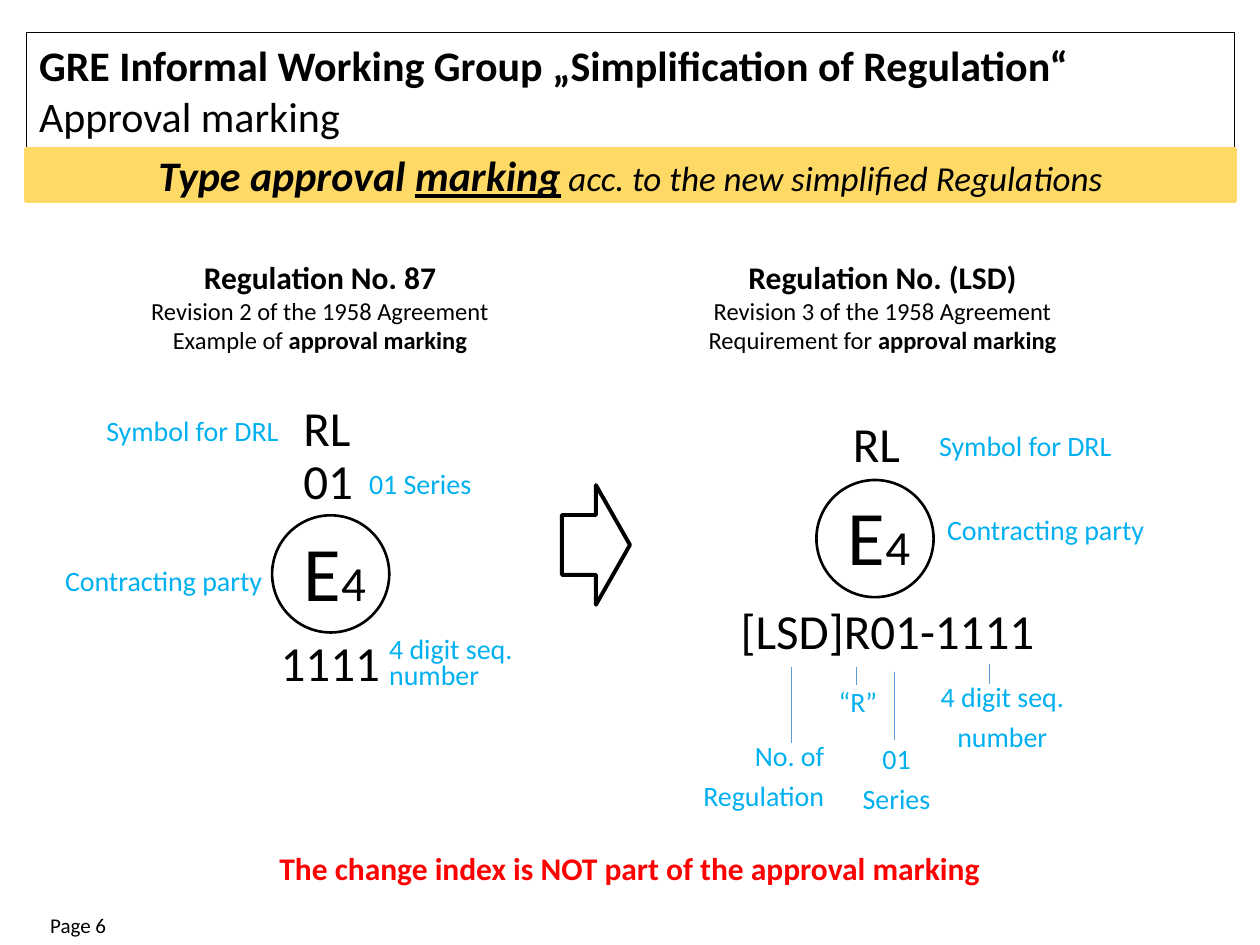
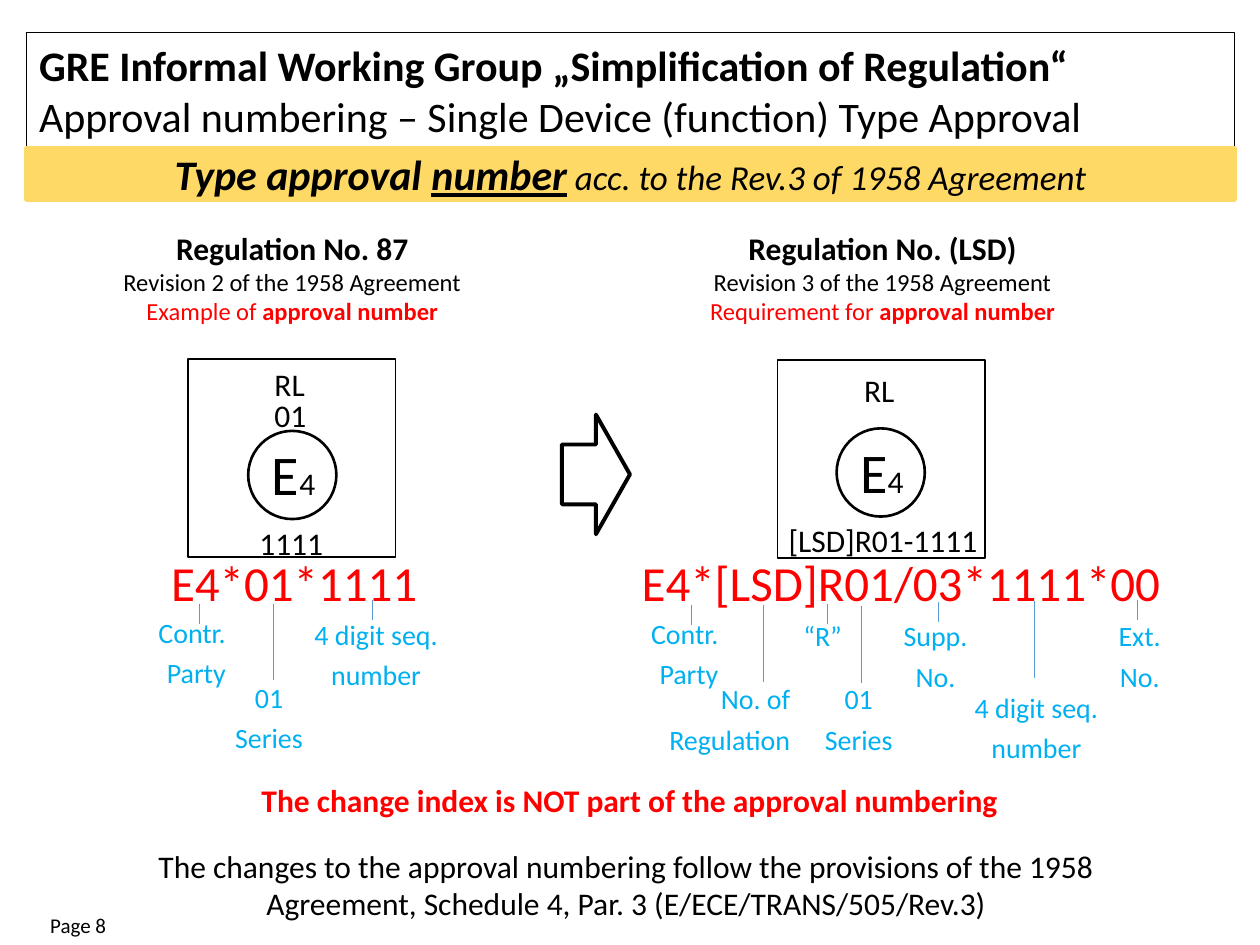
"""Build two slides that compare approval marking and approval numbering."""
from lxml import etree
from pptx import Presentation
from pptx import util as u
from pptx.dml import color
from pptx.enum import shapes, text
from pptx.oxml import ns

HUES = {"ink": "000000", "note": "00B0F0", "tick": "5B9BD5", "band": "FFD966",
        "alert": "FF0000", "white": "FFFFFF"}
FACE = "Calibri"
HEAD = "GRE Informal Working Group „Simplification of Regulation“"
BOLD = {"bold": True}
LEFT, MID, RIGHT = text.PP_ALIGN.LEFT, text.PP_ALIGN.CENTER, text.PP_ALIGN.RIGHT
KINDS = shapes.MSO_SHAPE
SEQ = "4 digit seq. number"


def rgb(hue):
    """Return the colour of a named hue."""
    return color.RGBColor.from_string(HUES[hue])


def box(*at):
    """Turn left, top, width and height into lengths."""
    return [u.Inches(x) for x in at]


def style(font, fmt):
    """Set font attributes from a dict of format values."""
    for key, val in fmt.items():
        if key == "hue":
            font.color.rgb = rgb(val)
        else:
            setattr(font, key, u.Pt(val) if key == "size" else val)


def write(shape, paras, size, hue="ink", align=LEFT, lead=None, **frame):
    """Fill a shape with paragraphs, each a list of (text, format) runs."""
    body = shape.text_frame
    prefs = {"word_wrap": True, "auto_size": text.MSO_AUTO_SIZE.SHAPE_TO_FIT_TEXT}
    for key, val in {**prefs, **frame}.items():
        setattr(body, key, val)
    for i, runs in enumerate(paras):
        para = body.add_paragraph() if i else body.paragraphs[0]
        para.alignment = align
        if lead:
            para.line_spacing = u.Pt(lead)
        for words, fmt in runs:
            run = para.add_run()
            run.text = words
            style(run.font, {"name": FACE, "size": size, "hue": hue, **fmt})


def plain(words):
    """Split text at line ends into paragraphs of one run each."""
    return [[(line, {})] for line in words.split("\n")]


def put(slide, at, paras, size, **opts):
    """Add a text box."""
    write(slide.shapes.add_textbox(*box(*at)), paras, size, **opts)


def mark(slide, words, at, size=28, **opts):
    """Add one unwrapped part of an approval mark."""
    put(slide, at, plain(words), size, lead=30, word_wrap=False, **opts)


def note(slide, words, at, align=MID, lead=23):
    """Add a blue explanation."""
    put(slide, at, plain(words), 16, hue="note", align=align, lead=lead)


def shape(slide, kind, at, width=None, line="ink", fill=None):
    """Add a flat preset shape."""
    form = slide.shapes.add_shape(kind, *box(*at))
    form.shadow.inherit = False
    if fill:
        form.fill.solid()
        form.fill.fore_color.rgb = rgb(fill)
    else:
        form.fill.background()
    if width:
        form.line.color.rgb = rgb(line)
        form.line.width = u.Pt(width)
    else:
        form.line.fill.background()
    return form


def tick(slide, x, top, length):
    """Add a thin upright leader line."""
    line = slide.shapes.add_connector(
        shapes.MSO_CONNECTOR.STRAIGHT, *box(x, top, x, top + length))
    line.line.color.rgb = rgb("tick")
    line.line.width = u.Pt(0.5)
    etree.SubElement(line._element.spPr, ns.qn("a:effectLst"))


def badge(slide, left, top, size, inset, big, small):
    """Add the circled country sign."""
    put(slide, (left + inset, top + 0.02, size, size - 0.08),
        [[("E", {"size": big}), ("4", {})]], small)
    shape(slide, KINDS.OVAL, (left, top, size, size), 1.5)


def arrow(slide, top):
    """Add the arrow from the old to the new form."""
    shape(slide, KINDS.RIGHT_ARROW, (4.46, top, 0.54, 0.95), 2.25)


def intro(slide, left, top, width, rule, rev, lead, topic, hue="ink"):
    """Add the heading above one side."""
    small = {"size": 14}
    last = {"size": 14, "hue": hue}
    put(slide, (left, top, width, 0.88),
        [[("Regulation No. " + rule, BOLD)],
         [(f"Revision {rev} of the 1958 Agreement", small)],
         [(lead + " ", last), ("approval " + topic, {**last, **BOLD})]],
        18, align=MID)


def code(slide, words, left, width):
    """Add a red approval number."""
    form = shape(slide, KINDS.RECTANGLE, (left, 4.38, width, 0.52), fill="white")
    write(form, plain(words), 28, hue="alert", align=MID, lead=30)


def alert(slide, topic, top):
    """Add the red remark on the change index."""
    put(slide, (1.8, top, 6.4, 0.4),
        [[("The change index is NOT part of the approval " + topic, BOLD)]],
        18, hue="alert", align=MID)


def start(deck, sub, topic, rest, page, top):
    """Add a slide with title, band and page number."""
    slide = deck.slides.add_slide(deck.slide_layouts[5])
    title = slide.shapes.title
    title.left, title.top, title.width, title.height = box(0.21, 0.26, 9.59, 0.91)
    title.line.color.rgb = rgb("ink")
    title.line.width = u.Pt(0.75)
    write(title, [[(HEAD, BOLD)], [(sub, {"bold": False})]], 24,
          auto_size=text.MSO_AUTO_SIZE.NONE, vertical_anchor=text.MSO_ANCHOR.MIDDLE)
    band = shape(slide, KINDS.RECTANGLE, (0.21, top, 9.59, 0.4), 3, "band", "band")
    strong = {"bold": True, "italic": True}
    write(band, [[("Type approval ", strong), (topic, {**strong, "underline": True}),
                  (" " + rest, {"size": 20, "italic": True})]], 24, align=MID,
          margin_left=u.Inches(0.04), margin_right=u.Inches(0.04),
          margin_top=0, margin_bottom=0, vertical_anchor=text.MSO_ANCHOR.MIDDLE)
    put(slide, (0.3, 7.19, 1.3, 0.3), plain(f"Page {page}"), 12)
    return slide


def marking(deck):
    """Build the slide on approval marking."""
    slide = start(deck, "Approval marking", "marking",
                  "acc. to the new simplified Regulations", 6, 1.19)
    intro(slide, 0.85, 2, 3.38, "87", 2, "Example of", "marking")
    intro(slide, 5.12, 2, 3.77, "(LSD)", 3, "Requirement for", "marking")
    for left, top in ((2.16, 4.09), (6.48, 3.81)):
        badge(slide, left, top, 0.93, 0.15, 44, 28)
    for words, *at in (("RL\n01", 2.31, 3.16, 0.6, 0.94), ("1111", 2.13, 5.02, 1, 0.52),
                       ("RL", 6.67, 3.28, 0.58, 0.52),
                       ("[LSD]R01-1111", 5.78, 4.77, 2.57, 0.52)):
        mark(slide, words, at)
    for left, top in ((-0.12, 3.18), (6.49, 3.3)):
        note(slide, "Symbol for DRL", (left, top, 2.43, 0.42), RIGHT)
    for left, top in ((0.22, 4.48), (7.22, 4.08)):
        note(slide, "Contracting party", (left, top, 1.96, 0.31), RIGHT, 15)
    note(slide, "01 Series", (2.76, 3.6, 1.15, 0.42))
    note(slide, SEQ, (2.99, 5.02, 1.29, 0.52), LEFT, 15)
    note(slide, "No. of Regulation", (5.33, 5.76, 1.31, 0.75), RIGHT)
    note(slide, "“R”", (6.47, 5.33, 0.59, 0.42), RIGHT)
    note(slide, "01 Series", (6.67, 5.78, 0.89, 0.75))
    note(slide, SEQ, (7.3, 5.29, 1.31, 0.75))
    for spot in ((6.28, 5.29, 0.61), (6.8, 5.29, 0.15), (7.1, 5.33, 0.54),
                 (7.85, 5.27, 0.16)):
        tick(slide, *spot)
    arrow(slide, 3.85)
    alert(slide, "marking", 6.69)


def number(deck):
    """Build the slide on approval numbering."""
    slide = start(deck, "Approval numbering – Single Device (function) Type Approval",
                  "number", "acc. to the Rev.3 of 1958 Agreement", 8, 1.18)
    put(slide, (0.86, 6.67, 8.22, 0.71),
        plain("The changes to the approval numbering follow the provisions of the 1958 "
              "Agreement, Schedule 4, Par. 3 (E/ECE/TRANS/505/Rev.3)"), 18, align=MID)
    intro(slide, 0.63, 1.77, 3.38, "87", 2, "Example of", "number", "alert")
    intro(slide, 5.12, 1.77, 3.77, "(LSD)", 3, "Requirement for", "number", "alert")
    code(slide, "E4*01*1111", 0.7, 3.27)
    code(slide, "E4*[LSD]R01/03*1111*00", 4.94, 4.42)
    for left, top in ((1.14, 4.78), (5.05, 4.79)):
        note(slide, "Contr. Party", (left, top, 0.75, 0.75), RIGHT)
    for left, top in ((1.69, 5.3), (6.37, 5.31)):
        note(slide, "01 Series", (left, top, 0.89, 0.75))
    for left, top in ((2.33, 4.8), (7.57, 5.38)):
        note(slide, SEQ, (left, top, 1.31, 0.75))
    note(slide, "No. of Regulation", (5.06, 5.31, 1.31, 0.75), RIGHT)
    note(slide, "“R”", (6.19, 4.81, 0.59, 0.42), RIGHT)
    note(slide, "Supp. No.", (6.98, 4.81, 0.89, 0.72))
    note(slide, "Ext.\nNo.", (8.6, 4.81, 0.89, 0.72))
    for x, top in ((1.58, 4.79), (2.96, 4.76), (5.49, 4.8), (6.57, 4.79),
                   (7.45, 4.78), (9.03, 4.76)):
        tick(slide, x, top, 0.16)
    for x, top in ((2.17, 4.79), (6.06, 4.8), (6.84, 4.81), (8.21, 4.77)):
        tick(slide, x, top, 0.61)
    for left, top in ((1.97, 3.42), (6.64, 3.4)):
        badge(slide, left, top, 0.7, 0.09, 32, 18)
    for words, *at in (("RL", 2.08, 2.73, 0.45, 0.48), ("01", 2.08, 2.98, 0.46, 0.52),
                       ("1111", 1.96, 3.99, 0.71, 0.52), ("RL", 6.76, 2.78, 0.45, 0.48),
                       ("[LSD]R01-1111", 6.16, 3.97, 1.72, 0.48)):
        mark(slide, words, at, 18)
    for left, top in ((1.49, 2.85), (6.17, 2.86)):
        shape(slide, KINDS.RECTANGLE, (left, top, 1.65, 1.57), 1)
    alert(slide, "numbering", 6.15)
    arrow(slide, 3.29)


def main():
    """Build and save the deck."""
    deck = Presentation()
    deck.slide_width, deck.slide_height = u.Inches(10), u.Inches(7.5)
    marking(deck)
    number(deck)
    deck.save("out.pptx")


if __name__ == "__main__":
    main()
